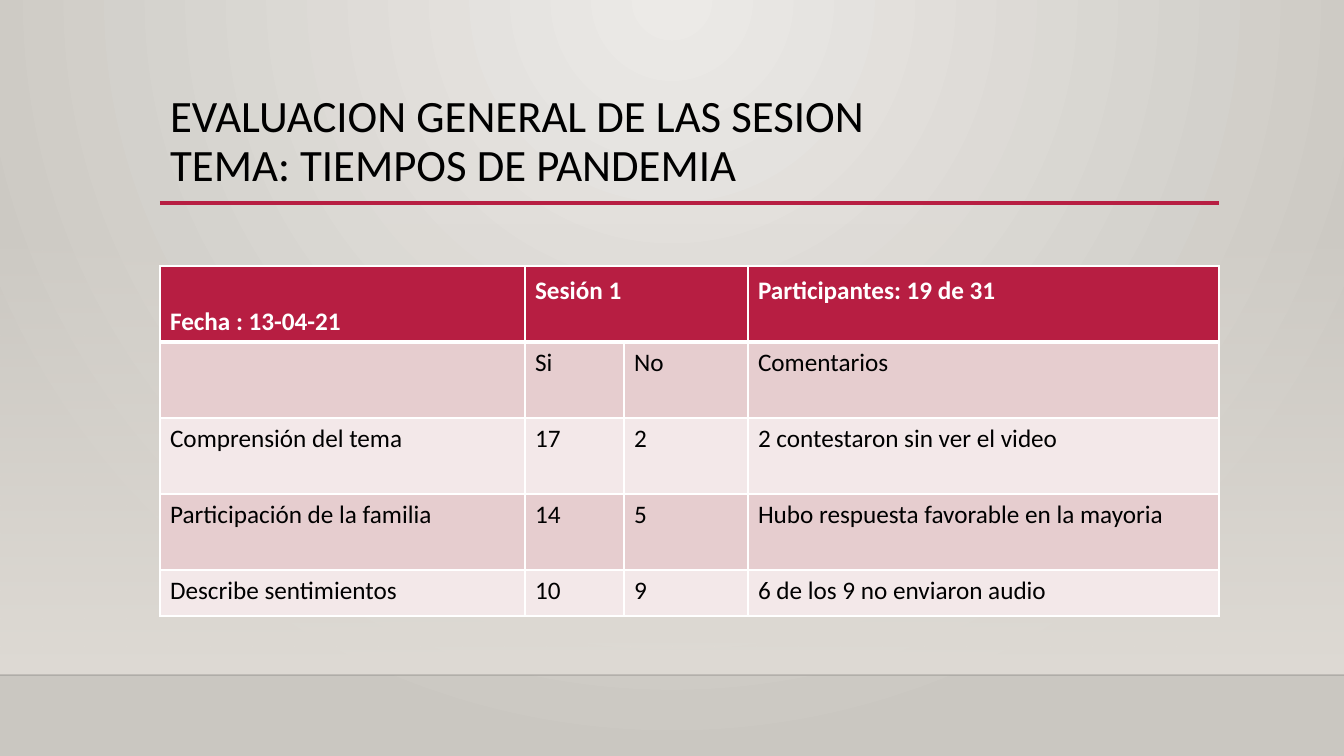
from lxml import etree
from pptx import Presentation
from pptx import util as u
from pptx.dml.color import RGBColor
from pptx.enum import shapes, text
from pptx.oxml.ns import qn

SCALE = 12192000 / 1344  # EMU per px
FONT = "Calibri"
CRIMSON, WHITE, BLACK = "B71E42", "FFFFFF", "000000"
BANDS = ("E6CDCF", "F3E8E9")

COLUMN_WIDTHS = (365, 99, 124, 471)
ROW_HEIGHTS = (76, 76, 76, 76, 46)
HEADER = ("Fecha : 13-04-21", "Sesión 1", "", "Participantes: 19 de 31")
ROWS = (
    ("", "Si", "No", "Comentarios"),
    ("Comprensión del tema", "17", "2", "2 contestaron sin ver el video"),
    ("Participación de la familia", "14", "5", "Hubo respuesta favorable en la mayoria"),
    ("Describe sentimientos", "10", "9", "6 de los 9 no enviaron audio"),
)


def px(value):
    return u.Emu(round(value * SCALE))


def color(value):
    return RGBColor.from_string(value)


def add_xml(parent, tag, **attributes):
    values = {name: str(value) for name, value in attributes.items()}
    return etree.SubElement(parent, qn(tag), values)


def add_color(parent, value, alpha=100):
    element = add_xml(parent, "a:srgbClr", val=value)
    if alpha < 100:
        add_xml(element, "a:alpha", val=alpha * 1000)


def set_gradient(fill, owner, stops):
    """Replace the stops of a fill; return its element, ready for a direction."""
    fill.gradient()
    gradient = next(owner.iter(qn("a:gradFill")))
    for child in list(gradient):
        gradient.remove(child)
    stop_list = add_xml(gradient, "a:gsLst")
    for position, value, alpha in stops:
        add_color(add_xml(stop_list, "a:gs", pos=position * 1000), value, alpha)
    return gradient


def write(frame, content, size=18, fill=BLACK, bold=False, spacing=None):
    frame.text = content
    for paragraph in frame.paragraphs:
        paragraph.alignment = text.PP_ALIGN.LEFT
        paragraph.line_spacing = spacing
        paragraph.font.size = u.Pt(size)
        for run in paragraph.runs:
            run.font.name = FONT
            run.font.size = u.Pt(size)
            run.font.bold = bold
            run.font.color.rgb = color(fill)


def add_background(slide):
    stops = ((0, "ECEAE7", 100), (100, "CAC7C1", 100))
    gradient = set_gradient(slide.background.fill, slide.element, stops)
    direction = add_xml(gradient, "a:path", path="circle")
    add_xml(direction, "a:fillToRect", l=43000, t=0, r=43000, b=100000)


def add_wall(slide):
    wall = slide.shapes.add_shape(
        shapes.MSO_SHAPE.RECTANGLE, px(0), px(223), px(1344), px(452))
    wall.shadow.inherit = False
    wall.line.fill.background()
    stops = ((0, "DFDBD5", 0), (100, "DFDBD5", 100))
    gradient = set_gradient(wall.fill, wall.element.spPr, stops)
    add_xml(gradient, "a:lin", ang=5400000, scaled=0)


def add_rule(slide, left, right, top, value, width, alpha=100):
    rule = slide.shapes.add_connector(
        shapes.MSO_CONNECTOR.STRAIGHT, px(left), px(top), px(right), px(top))
    rule.line.width = u.Pt(width)
    rule.line.color.rgb = color(value)
    properties = rule.element.spPr
    if alpha < 100:
        add_xml(next(properties.iter(qn("a:srgbClr"))), "a:alpha", val=alpha * 1000)
    add_xml(properties, "a:effectLst")


def add_title(slide, content):
    title = slide.shapes.title
    title.left, title.top, title.width, title.height = px(160), px(89), px(1059), px(116)
    frame = title.text_frame
    frame.word_wrap = True
    frame.auto_size = text.MSO_AUTO_SIZE.NONE
    frame.vertical_anchor = text.MSO_ANCHOR.TOP
    write(frame, content, size=32, spacing=0.9)


def set_borders(cell, top=1, bottom=1):
    properties = cell._tc.get_or_add_tcPr()
    sides = (("a:lnL", 1), ("a:lnR", 1), ("a:lnT", top), ("a:lnB", bottom))
    for index, (tag, width) in enumerate(sides):
        border = add_xml(properties, tag, w=u.Pt(width))
        add_color(add_xml(border, "a:solidFill"), WHITE)
        properties.insert(index, border)


def add_results(slide):
    table = slide.shapes.add_table(
        len(ROW_HEIGHTS), len(COLUMN_WIDTHS), px(160), px(266),
        px(sum(COLUMN_WIDTHS)), px(sum(ROW_HEIGHTS))).table
    table.horz_banding = False
    for column, width in zip(table.columns, COLUMN_WIDTHS):
        column.width = px(width)
    for row, height in zip(table.rows, ROW_HEIGHTS):
        row.height = px(height)

    for row_index, contents in enumerate((HEADER, *ROWS)):
        header = row_index == 0
        for column_index, content in enumerate(contents):
            cell = table.cell(row_index, column_index)
            cell.fill.solid()
            cell.fill.fore_color.rgb = color(
                CRIMSON if header else BANDS[(row_index - 1) % 2])
            write(cell.text_frame, content, fill=WHITE if header else BLACK, bold=header)
            set_borders(cell, top=3 if row_index == 1 else 1, bottom=3 if header else 1)
            if header:
                cell.vertical_anchor = text.MSO_ANCHOR.BOTTOM
                # The session and attendance labels sit one line higher
                cell.margin_bottom = px(5 if column_index == 0 else 36)
    table.cell(0, 1).merge(table.cell(0, 2))


def main():
    presentation = Presentation()
    presentation.slide_width, presentation.slide_height = px(1344), px(756)
    slide = presentation.slides.add_slide(presentation.slide_layouts[5])

    # Backdrop: wall, floor edge and rule under the title
    add_background(slide)
    add_wall(slide)
    add_rule(slide, 0, 1344, 675, "000001", 1, alpha=20)
    add_rule(slide, 160, 1219, 203, CRIMSON, 2.5)

    # Content
    add_title(slide, "EVALUACION GENERAL DE LAS SESION\vTEMA: TIEMPOS DE PANDEMIA")
    add_results(slide)
    presentation.save("out.pptx")


if __name__ == "__main__":
    main()
